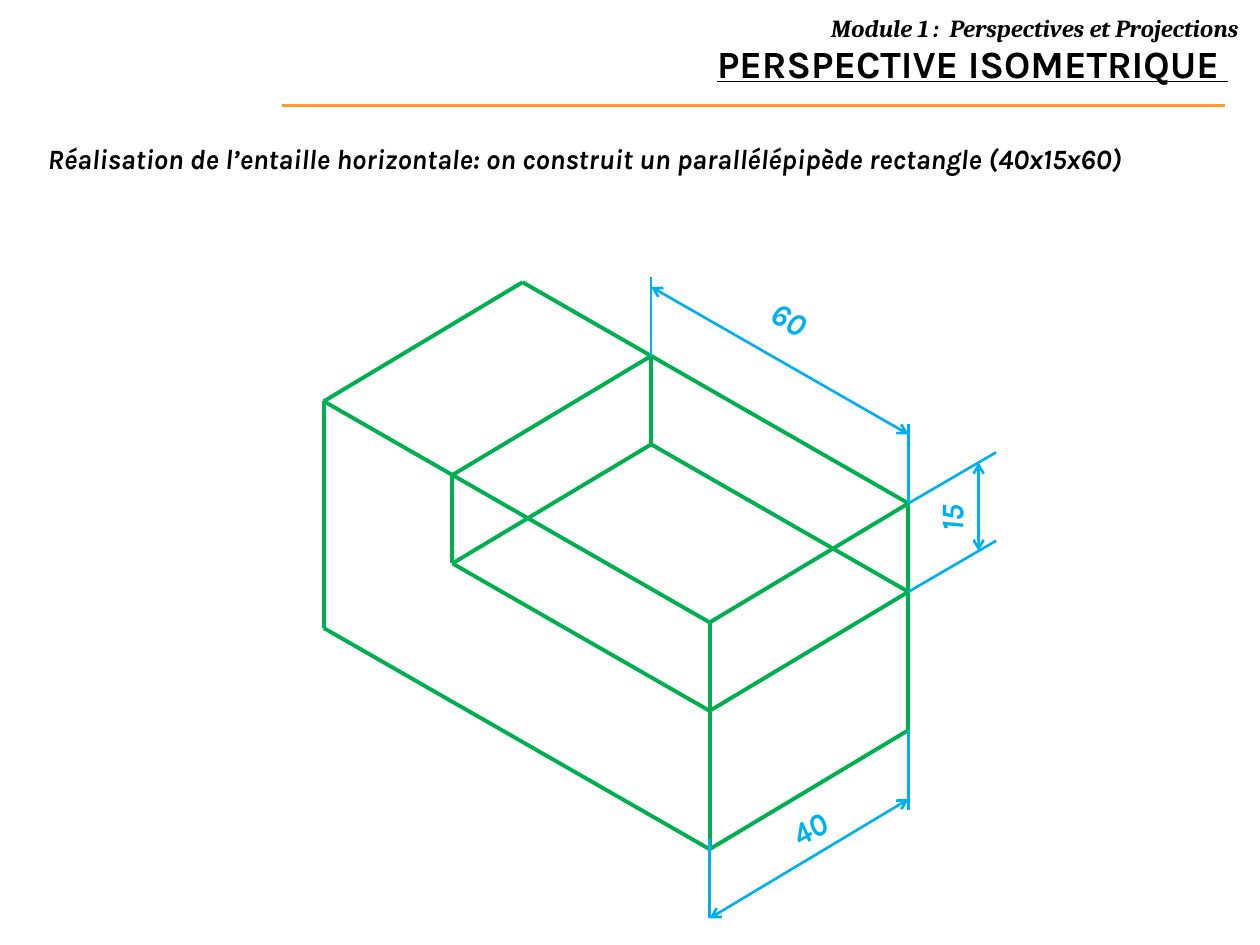
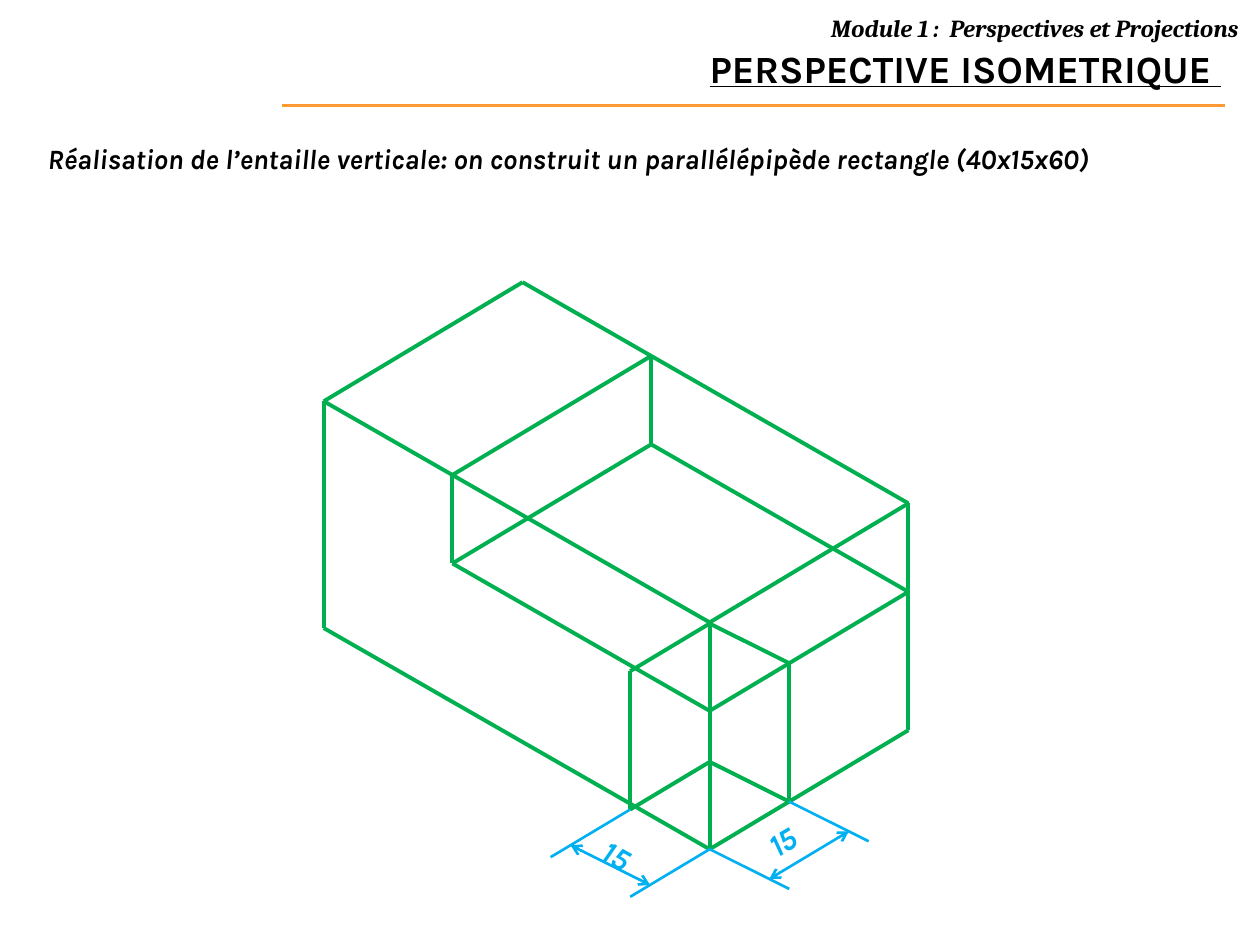
from dataclasses import dataclass
from itertools import combinations, product

from lxml.etree import SubElement
from pptx import Presentation
from pptx.dml.color import RGBColor
from pptx.enum.shapes import MSO_CONNECTOR, MSO_SHAPE
from pptx.enum.text import MSO_ANCHOR, MSO_AUTO_SIZE, PP_ALIGN
from pptx.oxml.ns import qn
from pptx.util import Inches, Pt

BLACK = RGBColor(0x00, 0x00, 0x00)
WHITE = RGBColor(0xFF, 0xFF, 0xFF)
ORANGE = RGBColor(0xFF, 0x99, 0x33)
GREEN = RGBColor(0x00, 0xB0, 0x50)
BLUE = RGBColor(0x00, 0xB0, 0xF0)

HEADING_FONT = "Karla"
MODULE_FONT = "Cambria"

# The slide is a grid of 100 columns by 75 rows of square cells.
CELL = Inches(0.1)
COLUMNS, ROWS = 100, 75


@dataclass
class Box:
    """A region in grid columns and rows."""
    left: float
    top: float
    width: float
    height: float

    def point(self, share):
        """Turn shares of this box into slide coordinates."""
        x, y = share
        return (round((self.left + x * self.width) * CELL),
                round((self.top + y * self.height) * CELL))

    def frame(self):
        return [round(side * CELL) for side in (self.left, self.top, self.width, self.height)]


MODULE_BOX = Box(37.4, 0.2, 61.9, 3.4)
RULE_BOX = Box(22.4, 8.4, 74.8, 0)
STEP_BOX = Box(2.8, 10.7, 97.2, 5.8)
DRAWING_BOX = Box(25.7, 22.4, 46.4, 45)
LABEL_WIDTH, LABEL_HEIGHT = 6.4, 4.7

# Projected axes of the block, as shares of the drawing box.
FRONT = (0.66, 1)
LENGTH = (-0.66, -0.39)
DEPTH = (0.34, -0.21)
HEIGHT = (0, -0.4)

CUT = 2 / 3     # length of the horizontal notch, 60 of 90
FLOOR = 0.61    # height of the notch floor
NOTCH_RIGHT = (0.4 * DEPTH[0], 0.4 * DEPTH[1])
NOTCH_LEFT = (-NOTCH_RIGHT[0], -0.07)

DOWN = (0, 0.14)
UP = (0, -0.14)
ASIDE = (0.15, -0.09)


def shift(start, step, times=1):
    return start[0] + times * step[0], start[1] + times * step[1]


def corner(length, depth, height):
    """Project a point given as shares of the block's three sides."""
    point = FRONT
    for axis, share in zip((LENGTH, DEPTH, HEIGHT), (length, depth, height)):
        point = shift(point, axis, share)
    return point


def add_line(page, box, start, end, color, width, arrows=False):
    line = page.shapes.add_connector(MSO_CONNECTOR.STRAIGHT, *box.point(start), *box.point(end))
    line.line.color.rgb = color
    line.line.width = Pt(width)
    properties = line._element.spPr
    if arrows:
        for tip in ("a:headEnd", "a:tailEnd"):
            SubElement(properties.find(qn("a:ln")), qn(tip), type="arrow")
    SubElement(properties, qn("a:effectLst"))


def write(shape, text, size, font=HEADING_FONT, color=BLACK, align=PP_ALIGN.LEFT,
          italic=True, underline=False):
    frame = shape.text_frame
    frame.word_wrap = True
    frame.auto_size = MSO_AUTO_SIZE.NONE
    frame.vertical_anchor = MSO_ANCHOR.TOP
    para = frame.paragraphs[0]
    para.alignment = align
    span = para.add_run()
    span.text = text
    span.font.name = font
    span.font.size = Pt(size)
    span.font.bold = True
    span.font.italic = italic
    span.font.underline = underline
    span.font.color.rgb = color
    return para


def add_module_band(page):
    add_line(page, RULE_BOX, (0, 0), (1, 0), ORANGE, 1.5)
    band = page.shapes.add_shape(MSO_SHAPE.RECTANGLE, *MODULE_BOX.frame())
    band.shadow.inherit = False
    band.fill.solid()
    band.fill.fore_color.rgb = WHITE
    band.line.fill.background()
    para = write(band, "Module 1\u00a0:  Perspectives et Projections", 14, MODULE_FONT,
                 align=PP_ALIGN.RIGHT)
    para.line_spacing = 1.15
    para.space_after = Pt(10)


def add_title(page, box):
    title = page.shapes.title
    title.left, title.top, title.width, title.height = box.frame()
    write(title, "PERSPECTIVE ISOMETRIQUE ", 22, align=PP_ALIGN.RIGHT,
          italic=False, underline=True)


def add_step(page, text):
    write(page.shapes.add_textbox(*STEP_BOX.frame()), text, 16)


def add_label(page, box, center, text, rotation):
    left = box.left + center[0] * box.width - LABEL_WIDTH / 2
    top = box.top + center[1] * box.height - LABEL_HEIGHT / 2
    label = page.shapes.add_textbox(*Box(left, top, LABEL_WIDTH, LABEL_HEIGHT).frame())
    label.rotation = rotation
    write(label, text, 18, color=BLUE)


def add_dimension(page, box, first, second, reach, arrow_share, trim=0):
    """Draw two extension lines along reach and the double arrow between them.

    trim moves the first extension line back by that share of reach.
    """
    start = shift(first, reach, -trim)
    add_line(page, box, start, shift(start, reach), BLUE, 1.5)
    add_line(page, box, second, shift(second, reach), BLUE, 1.5)
    add_line(page, box, shift(first, reach, arrow_share), shift(second, reach, arrow_share),
             BLUE, 1.5, arrows=True)


def block_edges():
    """List the edges of the block that do not meet its hidden corner."""
    hidden = (1, 1, 0)
    corners = [place for place in product((0, 1), repeat=3) if place != hidden]
    return [(a, b) for a, b in combinations(corners, 2)
            if sum(p != q for p, q in zip(a, b)) == 1]


def horizontal_notch_edges():
    across = [((length, 0, height), (length, 1, height))
              for length, height in ((CUT, 1), (0, FLOOR), (CUT, FLOOR))]
    upright = [((length, depth, FLOOR), (length, depth, 1))
               for length, depth in ((0, 1), (CUT, 1), (CUT, 0))]
    along = [((0, depth, FLOOR), (CUT, depth, FLOOR)) for depth in (0, 1)]
    return across + upright + along


def draw_block(page, box):
    for start, end in block_edges() + horizontal_notch_edges():
        add_line(page, box, corner(*start), corner(*end), GREEN, 2.25)


def draw_vertical_notch(page, box):
    left, right = shift(FRONT, NOTCH_LEFT), shift(FRONT, NOTCH_RIGHT)
    inner = shift(left, NOTCH_RIGHT)
    for side in (left, right):
        add_line(page, box, side, shift(side, HEIGHT, FLOOR), GREEN, 2.25)
        for level in (0, FLOOR):
            add_line(page, box, shift(side, HEIGHT, level), shift(inner, HEIGHT, level),
                     GREEN, 2.25)


def add_horizontal_dimensions(page, box):
    add_dimension(page, box, corner(0, 0, 0), corner(0, 1, 0), DOWN, 0.87, trim=0.13)
    add_dimension(page, box, corner(0, 1, 1), corner(CUT, 1, 1), UP, 0.87)
    add_dimension(page, box, corner(0, 1, 1), corner(0, 1, FLOOR), ASIDE, 0.8)
    add_label(page, box, (0.85, 0.96), "40", 329.9)
    add_label(page, box, (0.81, 0.08), "60", 29.3)
    add_label(page, box, (1.08, 0.39), "15", 270)


def add_vertical_dimensions(page, box):
    for along, across in ((NOTCH_LEFT, NOTCH_RIGHT), (NOTCH_RIGHT, NOTCH_LEFT)):
        outward = (-across[0], -across[1])
        add_dimension(page, box, FRONT, shift(FRONT, along), outward, 0.75)
    add_label(page, box, (0.81, 0.98), "15", 329.9)
    add_label(page, box, (0.52, 1.03), "15", 29.3)


def add_page(deck, title_box, step):
    page = deck.slides.add_slide(deck.slide_layouts.get_by_name("Title Only"))
    add_module_band(page)
    add_title(page, title_box)
    add_step(page, step)
    draw_block(page, DRAWING_BOX)
    return page


def main():
    deck = Presentation()
    deck.slide_width, deck.slide_height = COLUMNS * CELL, ROWS * CELL

    page = add_page(deck, Box(21.7, 2.7, 76.8, 11.7),
                    "Réalisation de l’entaille horizontale: "
                    "on construit un parallélépipède rectangle (40x15x60)")
    add_horizontal_dimensions(page, DRAWING_BOX)

    page = add_page(deck, Box(21.1, 3.1, 76.8, 11.7),
                    "Réalisation de l’entaille verticale: "
                    "on construit un parallélépipède rectangle (40x15x60)")
    draw_vertical_notch(page, DRAWING_BOX)
    add_vertical_dimensions(page, DRAWING_BOX)

    deck.save("out.pptx")


if __name__ == "__main__":
    main()
